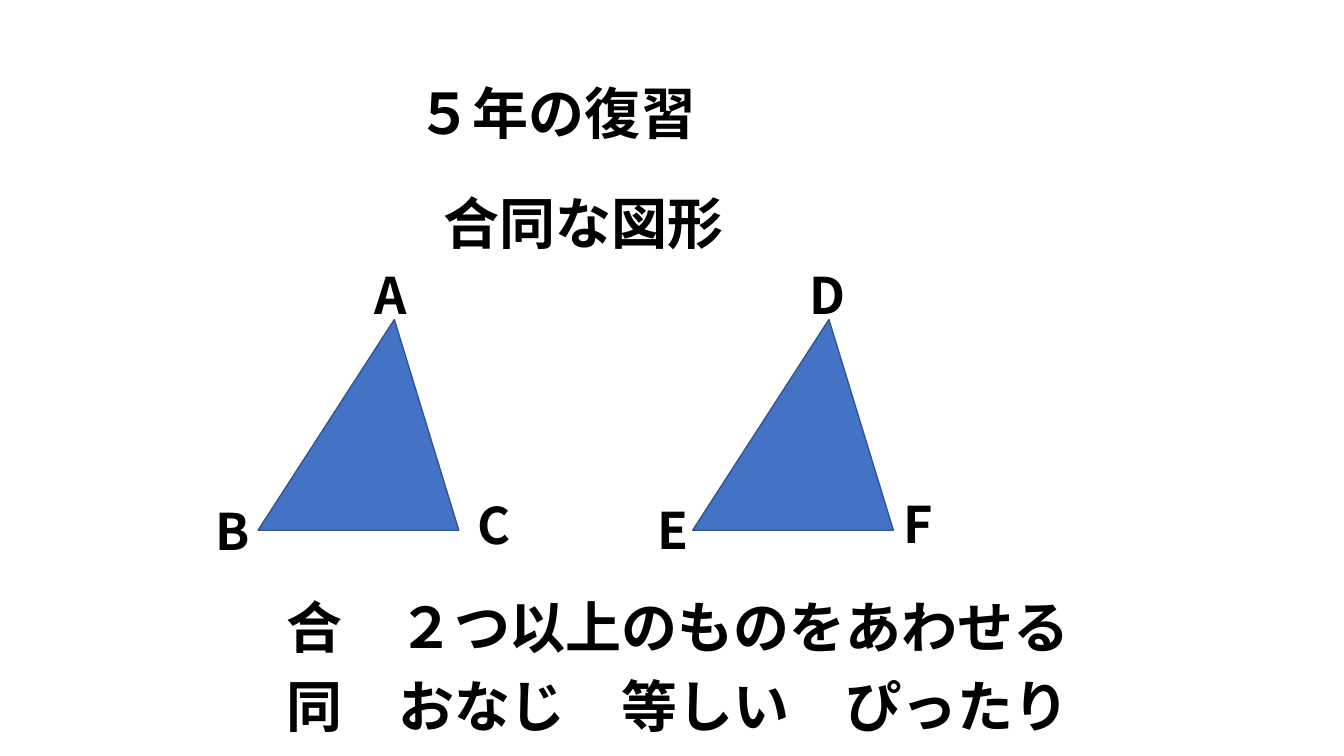
import dataclasses

import lxml.etree
import pptx
import pptx.dml.color
import pptx.enum.shapes
import pptx.enum.text
import pptx.oxml.ns
import pptx.util

FONT = "Noto Sans CJK JP"
TITLE_ONLY_LAYOUT = 5


@dataclasses.dataclass(frozen=True)
class Label:
    text: str
    left: float
    top: float
    width: float
    height: float = 0.71
    size: int = 36


@dataclasses.dataclass(frozen=True)
class Triangle:
    left: float
    top: float = 3.17
    width: float = 1.99
    height: float = 2.09
    apex: float = 0.679


TITLE = Label("５年の復習", 4.03, 0.73, 3.19, 0.77, 40)
TRIANGLES = [Triangle(2.56), Triangle(6.87)]
LABELS = [
    Label("合同な図形", 4.3, 1.82, 3.19, 0.77, 40),
    Label("A", 3.62, 2.57, 0.55),
    Label("B", 2.04, 4.91, 0.56),
    Label("C", 4.64, 4.85, 0.56),
    Label("D", 7.93, 2.57, 0.59),
    Label("E", 6.42, 4.9, 0.53),
    Label("F", 8.86, 4.84, 0.52),
    Label("合　２つ以上のものをあわせる", 2.74, 5.83, 8.97, 0.77, 40),
    Label("同　おなじ　等しい　ぴったり", 2.74, 6.61, 9.47, 0.77, 40),
]


def color(value: str) -> pptx.dml.color.RGBColor:
    return pptx.dml.color.RGBColor.from_string(value)


def bounds(item: Label | Triangle) -> list[pptx.util.Length]:
    lengths = (item.left, item.top, item.width, item.height)
    return [pptx.util.Inches(length) for length in lengths]


def write_label(box, label: Label) -> None:
    """Place a text box or placeholder and fill it with bold black text."""
    box.left, box.top, box.width, box.height = bounds(label)
    frame = box.text_frame
    frame.text = label.text
    frame.word_wrap = True
    frame.auto_size = pptx.enum.text.MSO_AUTO_SIZE.SHAPE_TO_FIT_TEXT
    frame.vertical_anchor = pptx.enum.text.MSO_ANCHOR.TOP
    para = frame.paragraphs[0]
    para.alignment = pptx.enum.text.PP_ALIGN.LEFT
    para.font.name = FONT
    para.font.size = pptx.util.Pt(label.size)
    para.font.bold = True
    para.font.color.rgb = color("000000")
    # Japanese glyphs take their typeface from a:ea, beside a:latin.
    latin = next(para._p.iter(pptx.oxml.ns.qn("a:latin")))
    east_asian = lxml.etree.Element(pptx.oxml.ns.qn("a:ea"), typeface=FONT)
    latin.addnext(east_asian)


def draw_triangle(slide, triangle: Triangle) -> None:
    kind = pptx.enum.shapes.MSO_SHAPE.ISOSCELES_TRIANGLE
    shape = slide.shapes.add_shape(kind, *bounds(triangle))
    shape.adjustments[0] = triangle.apex
    shape.shadow.inherit = False
    shape.fill.solid()
    shape.fill.fore_color.rgb = color("4472C4")
    shape.line.color.rgb = color("325491")
    shape.line.width = pptx.util.Pt(1)


def main() -> None:
    deck = pptx.Presentation()
    deck.slide_width = pptx.util.Inches(13.33)
    deck.slide_height = pptx.util.Inches(7.5)
    page = deck.slides.add_slide(deck.slide_layouts[TITLE_ONLY_LAYOUT])

    write_label(page.shapes.title, TITLE)
    for triangle in TRIANGLES:
        draw_triangle(page, triangle)
    for label in LABELS:
        write_label(page.shapes.add_textbox(*bounds(label)), label)

    deck.save("out.pptx")


if __name__ == "__main__":
    main()
